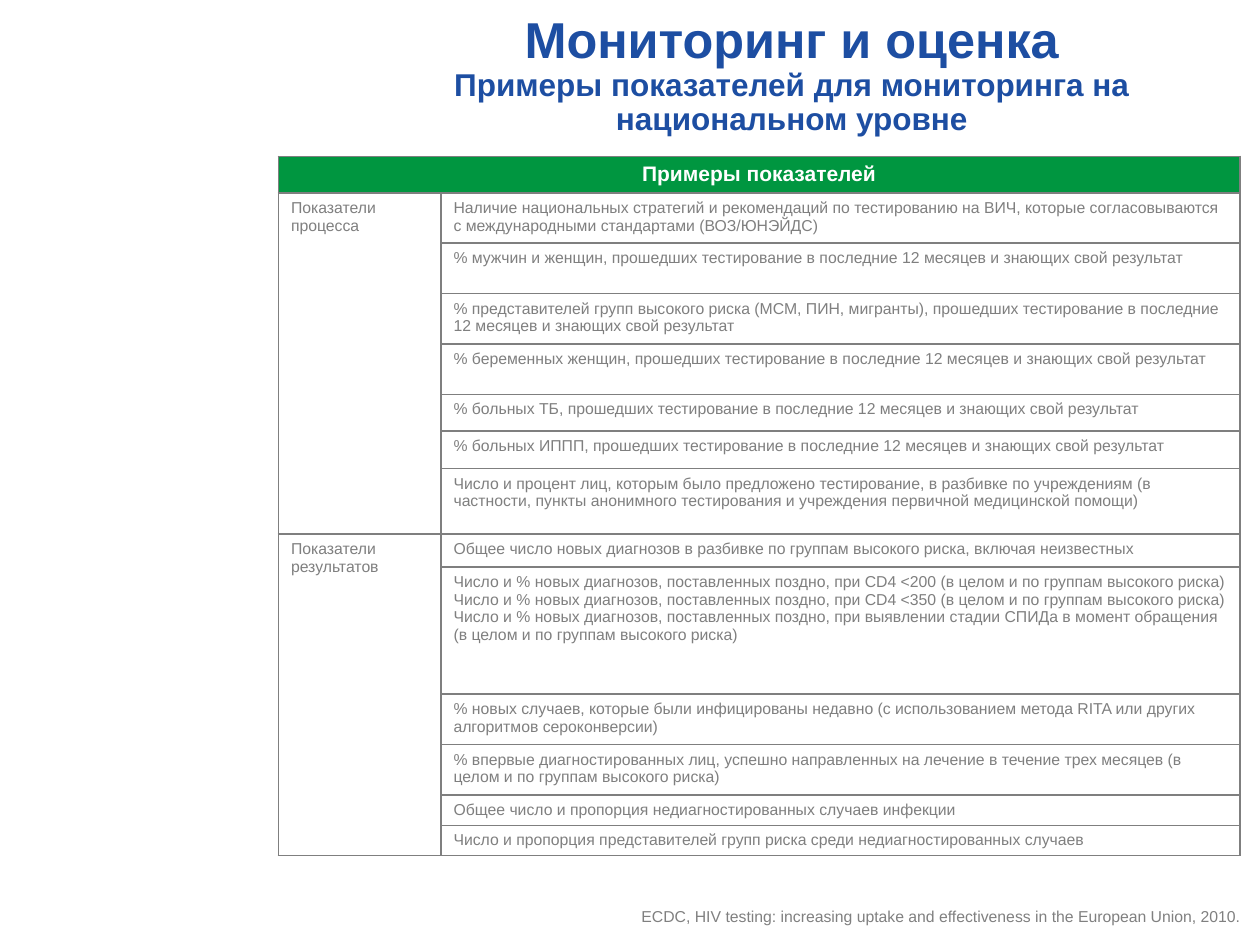
from lxml import etree
from pptx import Presentation
from pptx.dml.color import RGBColor
from pptx.enum.text import MSO_ANCHOR, PP_ALIGN
from pptx.oxml.ns import qn
from pptx.util import Inches, Pt

CENTER, LEFT, RIGHT = PP_ALIGN.CENTER, PP_ALIGN.LEFT, PP_ALIGN.RIGHT
BOTTOM = MSO_ANCHOR.BOTTOM
BLUE = RGBColor(0x1D, 0x4E, 0xA2)
GREEN = RGBColor(0x00, 0x96, 0x40)
WHITE = RGBColor(0xFF, 0xFF, 0xFF)
GRAY = RGBColor(0x7F, 0x7F, 0x7F)
SOURCE_GRAY = RGBColor(0x80, 0x80, 0x80)
FONT = "Arial"

TITLE = [
    ("Мониторинг и оценка", 28.8),
    ("Примеры показателей для мониторинга на национальном уровне", 18),
]
HEADER = "Примеры показателей"
HEADER_HEIGHT = 0.29
GROUPS = [
    ("Показатели процесса", [
        ("Наличие национальных стратегий и рекомендаций по тестированию на ВИЧ, которые "
         "согласовываются с международными стандартами (ВОЗ/ЮНЭЙДС)", 0.4),
        ("% мужчин и женщин, прошедших тестирование в последние 12 месяцев и знающих свой "
         "результат", 0.4),
        ("% представителей групп высокого риска (МСМ, ПИН, мигранты), прошедших тестирование "
         "в последние 12 месяцев и знающих свой результат", 0.4),
        ("% беременных женщин, прошедших тестирование в последние 12 месяцев и знающих свой "
         "результат", 0.4),
        ("% больных ТБ, прошедших тестирование в последние 12 месяцев и знающих свой "
         "результат", 0.29),
        ("% больных ИППП, прошедших тестирование в последние 12 месяцев и знающих свой "
         "результат", 0.3),
        ("Число и процент лиц, которым было предложено тестирование, в разбивке по учреждениям "
         "(в частности, пункты анонимного тестирования и учреждения первичной медицинской "
         "помощи)", 0.52),
    ]),
    ("Показатели результатов", [
        ("Общее число новых диагнозов в разбивке по группам высокого риска, включая "
         "неизвестных", 0.26),
        ("Число и % новых диагнозов, поставленных поздно, при CD4 <200 (в целом и по группам "
         "высокого риска)\n"
         "Число и % новых диагнозов, поставленных поздно, при CD4 <350 (в целом и по группам "
         "высокого риска)\n"
         "Число и % новых диагнозов, поставленных поздно, при выявлении стадии СПИДа в момент "
         "обращения (в целом и по группам высокого риска)", 1.01),
        ("% новых случаев, которые были инфицированы недавно (с использованием метода RITA или "
         "других алгоритмов сероконверсии)", 0.4),
        ("% впервые диагностированных лиц, успешно направленных на лечение в течение трех "
         "месяцев (в целом и по группам высокого риска)", 0.4),
        ("Общее число и пропорция недиагностированных случаев инфекции", 0.24),
        ("Число и пропорция представителей групп риска среди недиагностированных случаев", 0.24),
    ]),
]
COLUMN_WIDTHS = [1.29, 6.34]
SOURCE = "ECDC, HIV testing: increasing uptake and effectiveness in the European Union, 2010."


def style_font(font, size, color, bold=False):
    font.name, font.size, font.bold = FONT, Pt(size), bold
    font.color.rgb = color


def write(frame, text, size, color, align, bold=False):
    frame.text = text
    for para in frame.paragraphs:
        para.alignment = align
        style_font(para.font, size, color, bold)


def format_cell(cell, fill):
    properties = cell._tc.get_or_add_tcPr()
    for side in ("a:lnL", "a:lnR", "a:lnT", "a:lnB"):
        line = etree.SubElement(properties, qn(side), w=str(Pt(1)))
        solid = etree.SubElement(line, qn("a:solidFill"))
        etree.SubElement(solid, qn("a:srgbClr"), val=str(GRAY))
    cell.fill.solid()
    cell.fill.fore_color.rgb = fill


def add_title(slide):
    title = slide.shapes.title
    title.left, title.top = Inches(2.73), Inches(0.27)
    title.width, title.height = Inches(7.11), Inches(0.87)
    title.text_frame.vertical_anchor = BOTTOM
    para = title.text_frame.paragraphs[0]
    para.alignment, para.line_spacing = CENTER, 0.9
    for index, (text, size) in enumerate(TITLE):
        if index:
            para.add_line_break()
        span = para.add_run()
        span.text = text
        style_font(span.font, size, BLUE, True)


def add_indicators(slide):
    indicators = [item for _, items in GROUPS for item in items]
    heights = [HEADER_HEIGHT] + [height for _, height in indicators]
    table = slide.shapes.add_table(
        len(heights), len(COLUMN_WIDTHS), Inches(2.21), Inches(1.24),
        Inches(sum(COLUMN_WIDTHS)), Inches(sum(heights))).table
    for column, width in zip(table.columns, COLUMN_WIDTHS):
        column.width = Inches(width)
    for index, height in enumerate(heights):
        table.rows[index].height = Inches(height)
        for cell in table.rows[index].cells:
            format_cell(cell, WHITE if index else GREEN)

    table.cell(0, 0).merge(table.cell(0, 1))
    write(table.cell(0, 0).text_frame, HEADER, 12, WHITE, CENTER, True)
    for row, (text, _) in enumerate(indicators, 1):
        write(table.cell(row, 1).text_frame, text, 9, GRAY, LEFT)
    first = 1
    for name, items in GROUPS:
        group = table.cell(first, 0)
        group.merge(table.cell(first + len(items) - 1, 0))
        write(group.text_frame, name, 9, GRAY, LEFT)
        first += len(items)


def add_source(slide):
    box = slide.shapes.add_textbox(Inches(3.98), Inches(7.15), Inches(5.96), Inches(0.25))
    box.text_frame.word_wrap = True
    write(box.text_frame, SOURCE, 9, SOURCE_GRAY, RIGHT)


def main():
    deck = Presentation()
    deck.slide_width, deck.slide_height = Inches(10), Inches(7.5)
    slide = deck.slides.add_slide(deck.slide_layouts[5])
    add_title(slide)
    add_indicators(slide)
    add_source(slide)
    deck.save("out.pptx")


if __name__ == "__main__":
    main()
